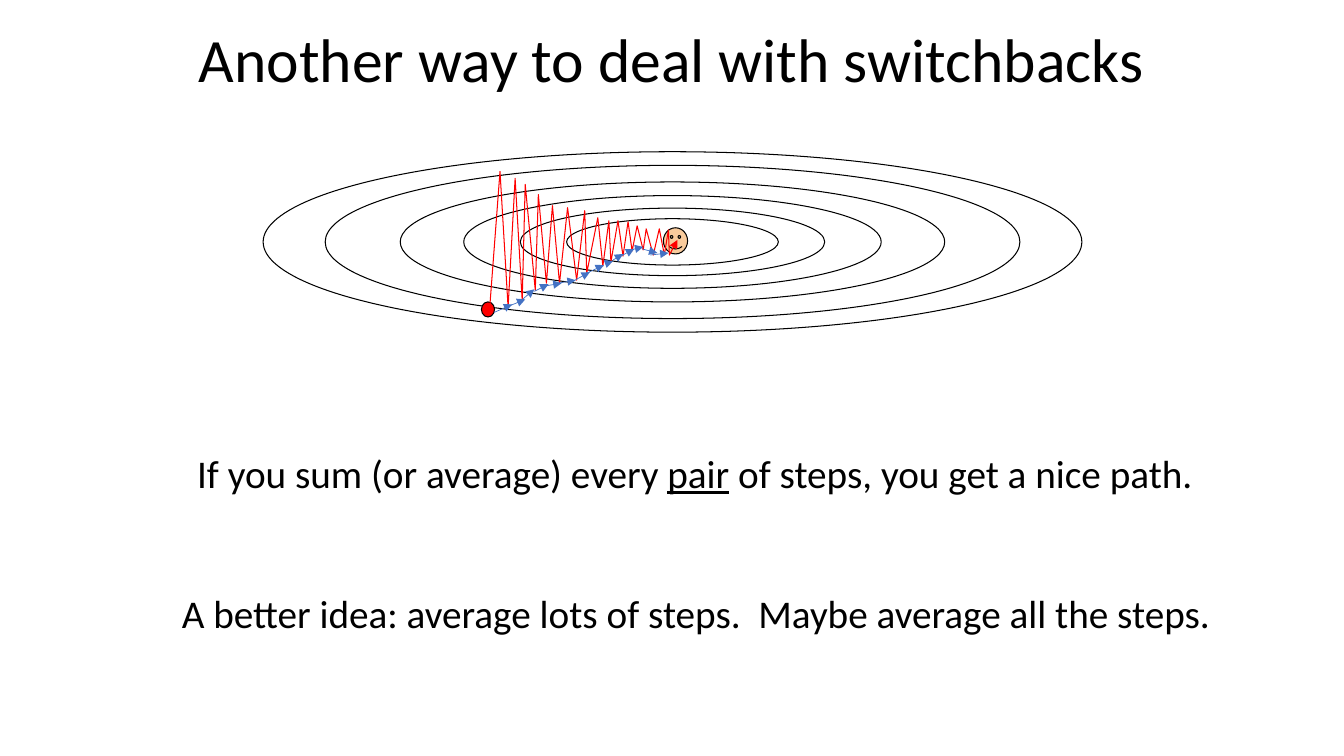
"""Build the slide on averaging steps to smooth out switchbacks."""
from dataclasses import dataclass

from pptx import Presentation
from pptx import util as u
from pptx.dml.color import RGBColor
from pptx.enum import shapes, text
from pptx.oxml.ns import qn
from lxml import etree

COLORS = {"ink": "000000", "step": "FF0000", "average": "4472C4", "face": "F9CB9C"}
CM_PER_INCH = 2.54
CENTER = (6.67, 2.4)
OVAL = shapes.MSO_SHAPE.OVAL


@dataclass
class Round:
    kind: shapes.MSO_SHAPE
    center: tuple[float, float]
    size: tuple[float, float]
    fill: str | None = None
    adjustment: float | None = None


@dataclass
class Caption:
    box: tuple[float, float, float, float]
    runs: list[tuple[str, bool]]
    size: int
    wrap: bool = False
    line_spacing: float = 1.0


CONTOUR_SIZES = [(2.1, 0.46), (8.12, 1.79), (6.89, 1.52), (5.4, 1.19), (4.14, 0.92), (3.02, 0.67)]
ROUNDS = [Round(OVAL, CENTER, size) for size in CONTOUR_SIZES] + [
    Round(OVAL, (4.84, 3.07), (0.13, 0.15), "step"),
    Round(shapes.MSO_SHAPE.SMILEY_FACE, (6.7, 2.39), (0.24, 0.26), "face", 0.047),
]

SWITCHBACKS = [
    (4.86, 3.02), (4.96, 1.7), (5.04, 3.05), (5.11, 1.77), (5.18, 2.98), (5.21, 1.83),
    (5.31, 2.88), (5.34, 1.93), (5.42, 2.81), (5.48, 2.04), (5.55, 2.81), (5.63, 2.06),
    (5.72, 2.78), (5.8, 2.09), (5.82, 2.71), (5.93, 2.16), (5.98, 2.64), (6.04, 2.19),
    (6.06, 2.6), (6.13, 2.19), (6.18, 2.54), (6.23, 2.2), (6.27, 2.49), (6.32, 2.24),
    (6.38, 2.48), (6.41, 2.27), (6.48, 2.53), (6.54, 2.27), (6.59, 2.53), (6.63, 2.28),
    (6.64, 2.53), (6.72, 2.38),
]

AVERAGED_STEPS = [
    (4.9, 3.1, 5.08, 3.02), (5.04, 3.04, 5.21, 2.97), (5.17, 2.98, 5.3, 2.87),
    (5.3, 2.89, 5.44, 2.82), (5.39, 2.84, 5.57, 2.81), (5.53, 2.81, 5.71, 2.78),
    (5.7, 2.78, 5.85, 2.7), (5.84, 2.7, 5.99, 2.63), (6, 2.62, 6.08, 2.59),
    (6.08, 2.58, 6.18, 2.52), (6.16, 2.54, 6.29, 2.47), (6.25, 2.48, 6.38, 2.45),
    (6.37, 2.47, 6.52, 2.51), (6.45, 2.53, 6.63, 2.51),
]

CAPTIONS = [
    Caption((0, 0, 13.33, 1.24), [("Another way to deal with switchbacks", False)], 44, True, 0.9),
    Caption(
        (1.8, 4.41, 10.18, 0.57),
        [("If you sum (or average) every ", False), ("pair", True),
         (" of steps, you get a nice path.", False)],
        28,
    ),
    Caption(
        (1.69, 5.8, 10.42, 0.57),
        [("A better idea: average lots of steps.  Maybe average all the steps.", False)],
        28,
    ),
]


def lengths(*inches: float) -> list[u.Length]:
    """Convert slide inches to lengths."""
    return [u.Cm(value * CM_PER_INCH) for value in inches]


def rgb(name: str) -> RGBColor:
    """Look up a named colour."""
    return RGBColor.from_string(COLORS[name])


def style_line(shape, color: str, width: float, arrow: bool = False) -> None:
    """Set the outline, drop the shadow and optionally add an arrowhead."""
    shape.line.color.rgb = rgb(color)
    shape.line.width = u.Pt(width)
    outline = shape.element.spPr.find(qn("a:ln"))
    if arrow:
        etree.SubElement(outline, qn("a:tailEnd"), type="triangle")
    outline.addnext(etree.Element(qn("a:effectLst")))


def draw_round(slide, item: Round) -> None:
    """Draw a contour, the starting point or the goal about its centre."""
    (x, y), (width, height) = item.center, item.size
    outline = slide.shapes.add_shape(
        item.kind, *lengths(x - width / 2, y - height / 2, width, height))
    if item.fill:
        outline.fill.solid()
        outline.fill.fore_color.rgb = rgb(item.fill)
    else:
        outline.fill.background()
    if item.adjustment is not None:
        outline.adjustments[0] = item.adjustment
    style_line(outline, "ink", 0.75)


def draw_switchbacks(slide) -> None:
    """Draw the zigzag path that ends at the goal."""
    start, *turns = [lengths(*point) for point in SWITCHBACKS]
    builder = slide.shapes.build_freeform(*start)
    builder.add_line_segments(turns, close=False)
    zigzag = builder.convert_to_shape()
    zigzag.fill.background()
    style_line(zigzag, "step", 0.75, arrow=True)


def draw_averaged_step(slide, ends: tuple[float, float, float, float]) -> None:
    """Draw the arrow for the average of a pair of steps."""
    step = slide.shapes.add_connector(shapes.MSO_CONNECTOR.STRAIGHT, *lengths(*ends))
    style_line(step, "average", 0.5, arrow=True)


def draw_caption(slide, caption: Caption) -> None:
    """Write a centred line of text."""
    frame = slide.shapes.add_textbox(*lengths(*caption.box)).text_frame
    frame_format = {
        "word_wrap": caption.wrap,
        "vertical_anchor": text.MSO_ANCHOR.MIDDLE if caption.wrap else text.MSO_ANCHOR.TOP,
        "auto_size": text.MSO_AUTO_SIZE.NONE if caption.wrap
        else text.MSO_AUTO_SIZE.SHAPE_TO_FIT_TEXT,
    }
    for name, value in frame_format.items():
        setattr(frame, name, value)
    sentence = frame.paragraphs[0]
    sentence.alignment = text.PP_ALIGN.CENTER
    sentence.line_spacing = caption.line_spacing
    for words, underlined in caption.runs:
        run = sentence.add_run()
        run.text = words
        font_format = {"name": "Calibri", "size": u.Pt(caption.size), "underline": underlined}
        for name, value in font_format.items():
            setattr(run.font, name, value)
        run.font.color.rgb = rgb("ink")


def main() -> None:
    """Assemble and save the slide."""
    deck = Presentation()
    deck.slide_width, deck.slide_height = lengths(13.33, 7.5)
    slide = deck.slides.add_slide(deck.slide_layouts[6])
    for item in ROUNDS:
        draw_round(slide, item)
    draw_switchbacks(slide)
    for ends in AVERAGED_STEPS:
        draw_averaged_step(slide, ends)
    for caption in CAPTIONS:
        draw_caption(slide, caption)
    deck.save("out.pptx")


if __name__ == "__main__":
    main()
